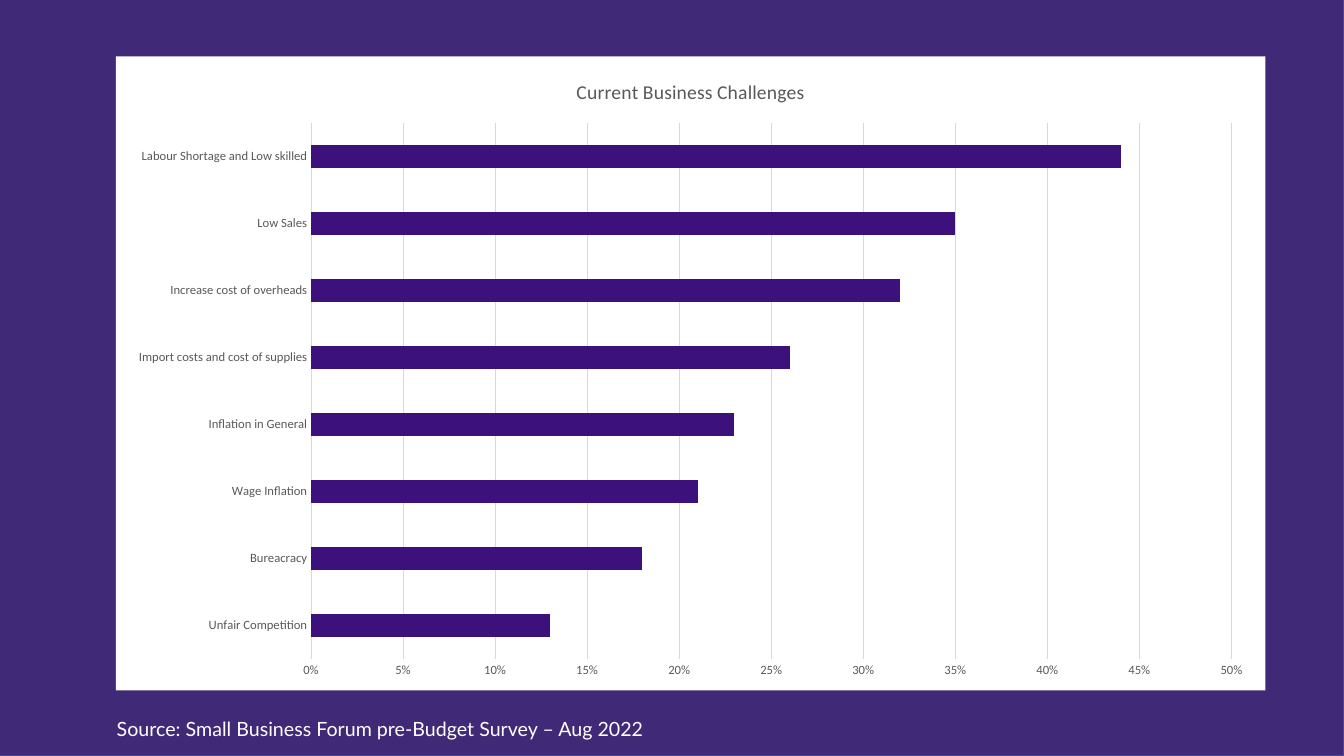
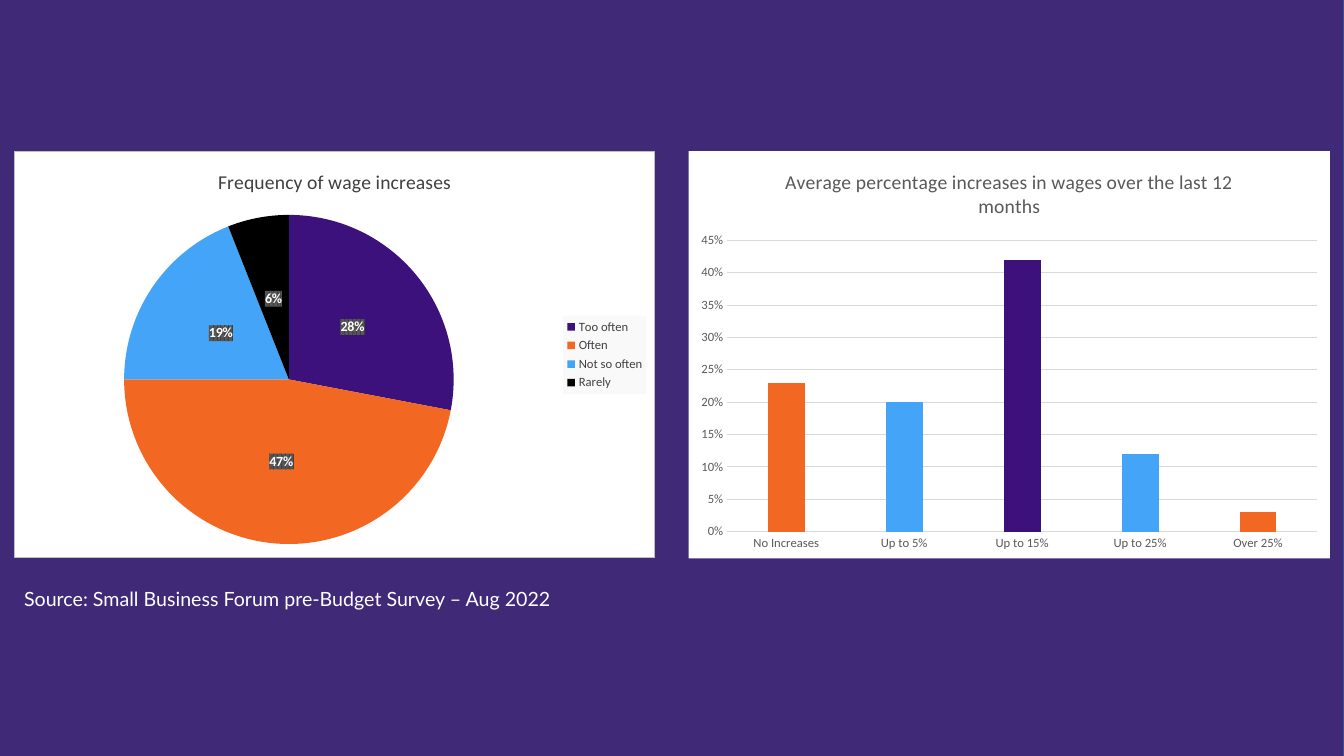
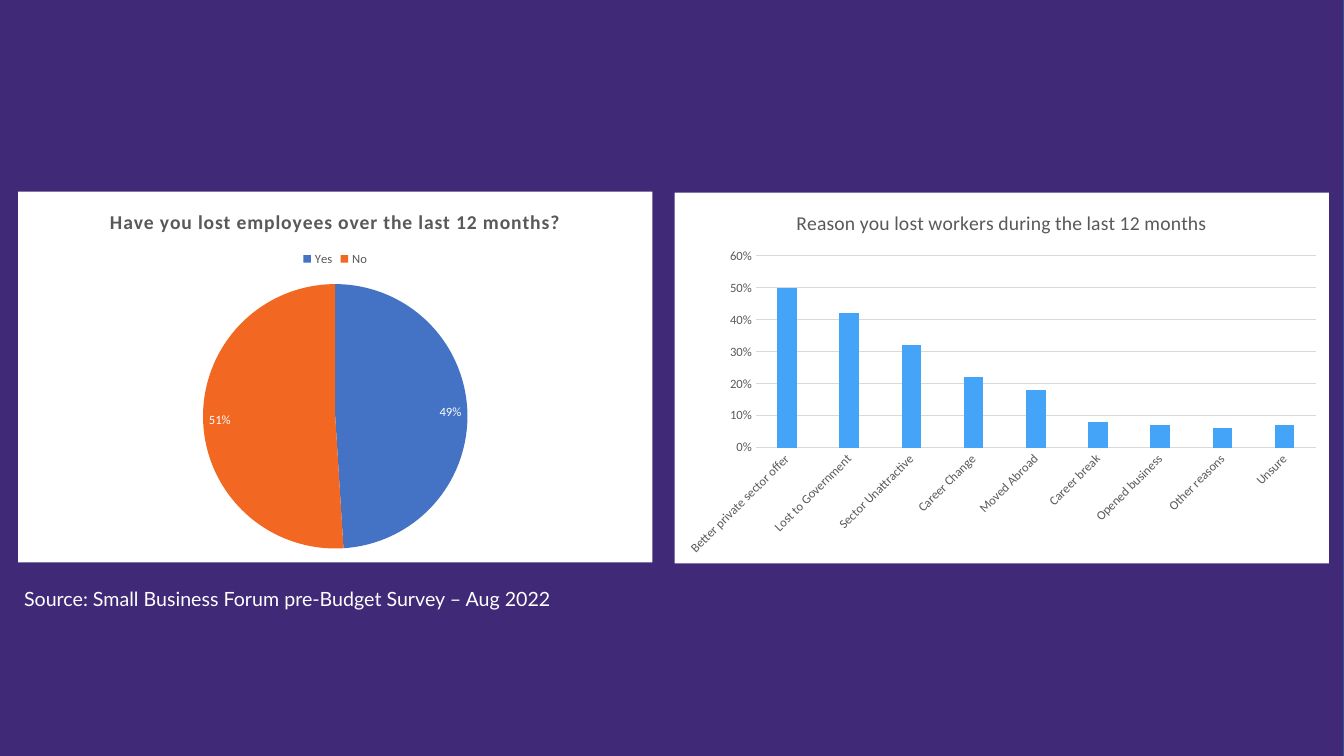
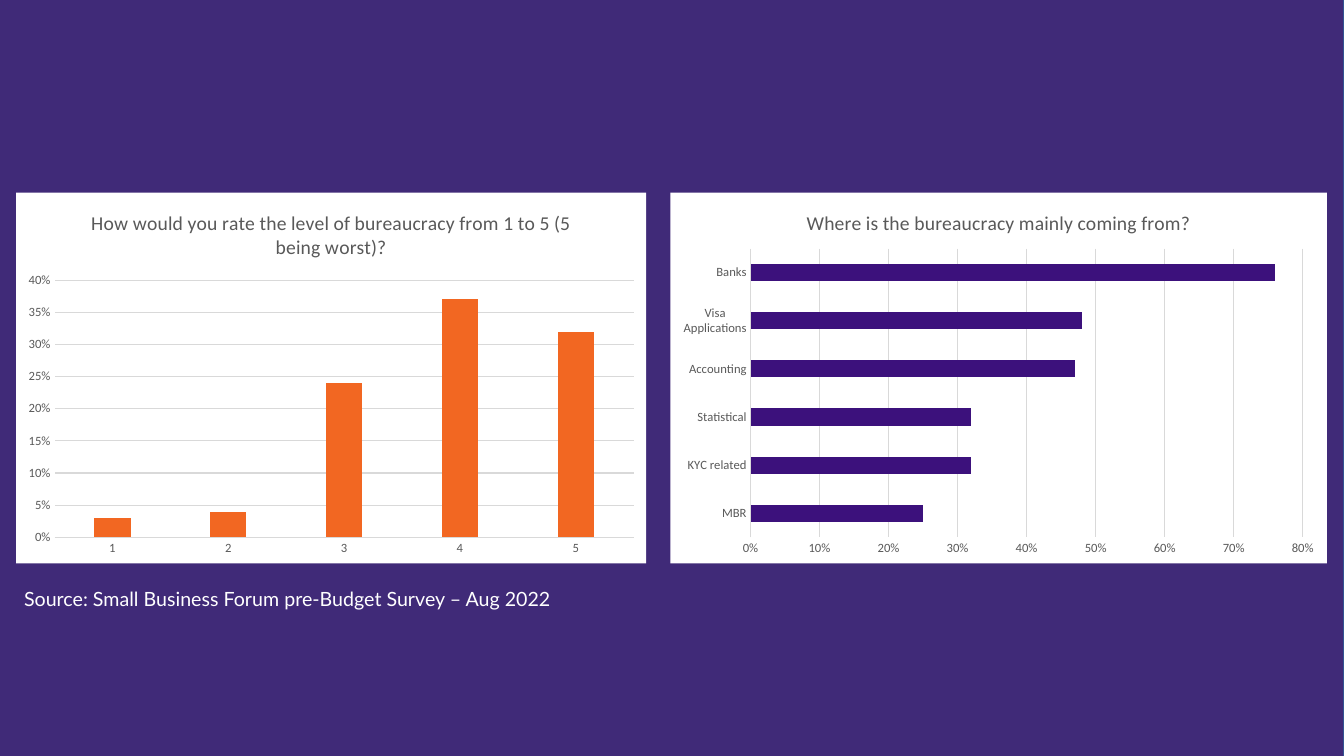
from lxml import etree
from pptx import Presentation
from pptx.chart.data import CategoryChartData
from pptx.dml.color import RGBColor
from pptx.enum.chart import XL_CHART_TYPE as ChartType
from pptx.enum.chart import XL_LABEL_POSITION as LabelPosition
from pptx.enum.chart import XL_LEGEND_POSITION as LegendPosition
from pptx.enum.chart import XL_TICK_MARK as TickMark
from pptx.enum.shapes import MSO_SHAPE as ShapeType
from pptx.enum.text import MSO_ANCHOR as Anchor
from pptx.oxml import parse_xml
from pptx.oxml.ns import nsdecls, qn
from pptx.util import Inches, Pt

COLORS = {
    "backdrop": "402A78", "edge": "325491", "white": "FFFFFF",
    "purple": "3C117C", "orange": "F26722", "sky": "44A4F7",
    "blue": "4472C4", "black": "000000", "text": "595959",
    "dark": "404040", "grid": "D9D9D9", "border": "BFBFBF", "pale": "F2F2F2",
}
SOURCE = "Source: Small Business Forum pre-Budget Survey – Aug 2022"
SOURCE_BOX = (0.14, 5.78)

SLIDES = [
    {"backdrop_top": -0.05, "source": (1.06, 7.07), "charts": [
        {"kind": "bar", "box": (1.15, 0.56, 11.4, 6.29),
         "title": "Current Business Challenges", "colors": ["purple"],
         "data": {"Unfair Competition": 0.13, "Bureacracy": 0.18,
                  "Wage Inflation": 0.21, "Inflation in General": 0.23,
                  "Import costs and cost of supplies": 0.26,
                  "Increase cost of overheads": 0.32, "Low Sales": 0.35,
                  "Labour Shortage and Low skilled": 0.44}},
    ]},
    {"charts": [
        {"kind": "pie", "box": (0.14, 1.5, 6.36, 4.04),
         "title": "Frequency of wage increases", "text": "dark",
         "colors": ["purple", "orange", "sky", "black"],
         "legend": LegendPosition.RIGHT, "labels": LabelPosition.CENTER,
         "boxed": True,
         "data": {"Too often": 28, "Often": 47, "Not so often": 19, "Rarely": 6}},
        {"kind": "column", "box": (6.83, 1.5, 6.36, 4.04),
         "title": "Average percentage increases in wages over the last 12 months",
         "colors": ["orange", "sky", "purple", "sky", "orange"],
         "data": {"No Increases": 0.23, "Up to 5%": 0.2, "Up to 15%": 0.42,
                  "Up to 25%": 0.12, "Over 25%": 0.03}},
    ]},
    {"charts": [
        {"kind": "pie", "box": (0.18, 1.9, 6.29, 3.68),
         "title": "Have you lost employees over the last 12 months?",
         "spaced_title": True, "colors": ["blue", "orange"],
         "legend": LegendPosition.TOP, "labels": LabelPosition.INSIDE_END,
         "data": {"Yes": 49, "No": 51}},
        {"kind": "column", "box": (6.69, 1.91, 6.49, 3.68),
         "title": "Reason you lost workers during the last 12 months",
         "colors": ["sky"], "slanted": True,
         "data": {"Better private sector offer": 0.5, "Lost to Government": 0.42,
                  "Sector Unattractive": 0.32, "Career Change": 0.22,
                  "Moved Abroad": 0.18, "Career break": 0.08,
                  "Opened business": 0.07, "Other reasons": 0.06, "Unsure": 0.07}},
    ]},
    {"charts": [
        {"kind": "column", "box": (0.16, 1.91, 6.25, 3.68),
         "title": "How would you rate the level of bureaucracy from 1 to 5 (5 being worst)?",
         "colors": ["orange"],
         "data": {"1": 0.03, "2": 0.04, "3": 0.24, "4": 0.37, "5": 0.32}},
        {"kind": "bar", "box": (6.65, 1.91, 6.51, 3.68),
         "title": "Where is the bureaucracy mainly coming from?",
         "colors": ["purple"],
         "data": {"MBR": 0.25, "KYC related": 0.32, "Statistical": 0.32,
                  "Accounting": 0.47, "Visa Applications": 0.48, "Banks": 0.76}},
    ]},
]
CHART_TYPES = {"bar": ChartType.BAR_CLUSTERED, "column": ChartType.COLUMN_CLUSTERED,
               "pie": ChartType.PIE}


def style_font(font, size, color, name="Calibri", bold=False):
    font.size, font.name, font.bold = Pt(size), name, bold
    font.color.rgb = RGBColor.from_string(COLORS[color])


def set_area(parent, fill, line="<a:ln><a:noFill/></a:ln>"):
    """Give a chart part its fill and outline, which the schema puts before its text style."""
    parent.find(qn("c:txPr")).addprevious(
        parse_xml(f"<c:spPr {nsdecls('c', 'a')}>{fill}{line}</c:spPr>"))


presentation = Presentation()
presentation.slide_width, presentation.slide_height = Inches(13.33), Inches(7.5)

for page in SLIDES:
    slide = presentation.slides.add_slide(presentation.slide_layouts[6])
    backdrop = slide.shapes.add_shape(
        ShapeType.RECTANGLE, Inches(-0.02), Inches(page.get("backdrop_top", -0.02)),
        Inches(13.35), Inches(7.55))
    backdrop.shadow.inherit = False
    backdrop.fill.solid()
    backdrop.fill.fore_color.rgb = RGBColor.from_string(COLORS["backdrop"])
    backdrop.line.color.rgb = RGBColor.from_string(COLORS["edge"])
    backdrop.line.width = Pt(1)

    left, top = page.get("source", SOURCE_BOX)
    source = slide.shapes.add_textbox(Inches(left), Inches(top), Inches(8.37), Inches(0.35))
    source.text_frame.word_wrap = True
    source.text_frame.vertical_anchor = Anchor.MIDDLE
    source.text_frame.text = SOURCE
    paragraph = source.text_frame.paragraphs[0]
    paragraph.line_spacing = 0.9
    style_font(paragraph.runs[0].font, 14, "white", "Lato")

    for item in page["charts"]:
        is_pie = item["kind"] == "pie"
        text_color = item.get("text", "text")
        chart_data = CategoryChartData(number_format="General" if is_pie else "0%")
        chart_data.categories = list(item["data"])
        chart_data.add_series("Series 1", list(item["data"].values()))
        chart = slide.shapes.add_chart(
            CHART_TYPES[item["kind"]], *map(Inches, item["box"]), chart_data).chart
        style_font(chart.font, 10, "black")

        chart_space = chart.font._element.getparent().getparent().getparent().getparent()
        if chart_space.find(qn("c:roundedCorners")) is None:
            corners = etree.Element(qn("c:roundedCorners"), val="0")
            chart_space.insert(0, corners)
        white_fill = f'<a:solidFill><a:srgbClr val="{COLORS["white"]}"/></a:solidFill>'
        if item.get("boxed"):
            set_area(chart_space, white_fill,
                     f'<a:ln w="9525"><a:solidFill><a:srgbClr val="{COLORS["border"]}"/>'
                     "</a:solidFill></a:ln>")
        else:
            set_area(chart_space, white_fill)

        chart.has_title = True
        chart.chart_title.include_in_layout = False
        chart.chart_title.text_frame.text = item["title"]
        title_run = chart.chart_title.text_frame.paragraphs[0].runs[0]
        spaced = item.get("spaced_title", False)
        style_font(title_run.font, 14, text_color, bold=spaced)
        if spaced:
            title_run.font._element.set("spc", "50")

        plot = chart.plots[0]
        plot.vary_by_categories = is_pie
        series = plot.series[0]
        colors = item["colors"]
        if len(colors) == 1:
            fills = [series.format.fill]
        else:
            fills = [series.points[index].format.fill for index in range(len(colors))]
        for fill, color in zip(fills, colors):
            fill.solid()
            fill.fore_color.rgb = RGBColor.from_string(COLORS[color])

        chart.has_legend = is_pie
        if is_pie:
            boxed = item.get("boxed", False)
            chart.legend.position = item["legend"]
            chart.legend.include_in_layout = False
            style_font(chart.legend.font, 9, text_color)
            plot.has_data_labels = True
            labels = plot.data_labels
            labels.show_percentage, labels.show_value = True, False
            labels.number_format, labels.number_format_is_linked = "0%", False
            labels.position = item["labels"]
            style_font(labels.font, 10 if boxed else 9, "white", bold=boxed)
            if boxed:
                set_area(chart.legend._element,
                         f'<a:solidFill><a:srgbClr val="{COLORS["pale"]}">'
                         '<a:alpha val="39000"/></a:srgbClr></a:solidFill>')
                set_area(labels._element,
                         '<a:pattFill prst="pct75">'
                         f'<a:fgClr><a:srgbClr val="{COLORS["dark"]}"/></a:fgClr>'
                         f'<a:bgClr><a:srgbClr val="{COLORS["text"]}"/></a:bgClr></a:pattFill>')
            continue

        plot.gap_width = 182 if item["kind"] == "bar" else 219
        if item["kind"] == "column":
            plot.overlap = -27
        category_axis, value_axis = chart.category_axis, chart.value_axis
        for axis in (category_axis, value_axis):
            axis.major_tick_mark = axis.minor_tick_mark = TickMark.NONE
            style_font(axis.tick_labels.font, 9, "text")
        value_axis.tick_labels.number_format = "0%"
        value_axis.tick_labels.number_format_is_linked = False
        value_axis.format.line.fill.background()
        value_axis.has_major_gridlines = True
        for line in (category_axis.format.line, value_axis.major_gridlines.format.line):
            line.color.rgb = RGBColor.from_string(COLORS["grid"])
            line.width = Pt(0.75)
        if item.get("slanted"):
            body = category_axis._element.find(qn("c:txPr")).find(qn("a:bodyPr"))
            body.set("rot", "-2700000")
            body.set("vert", "horz")

presentation.save("out.pptx")
